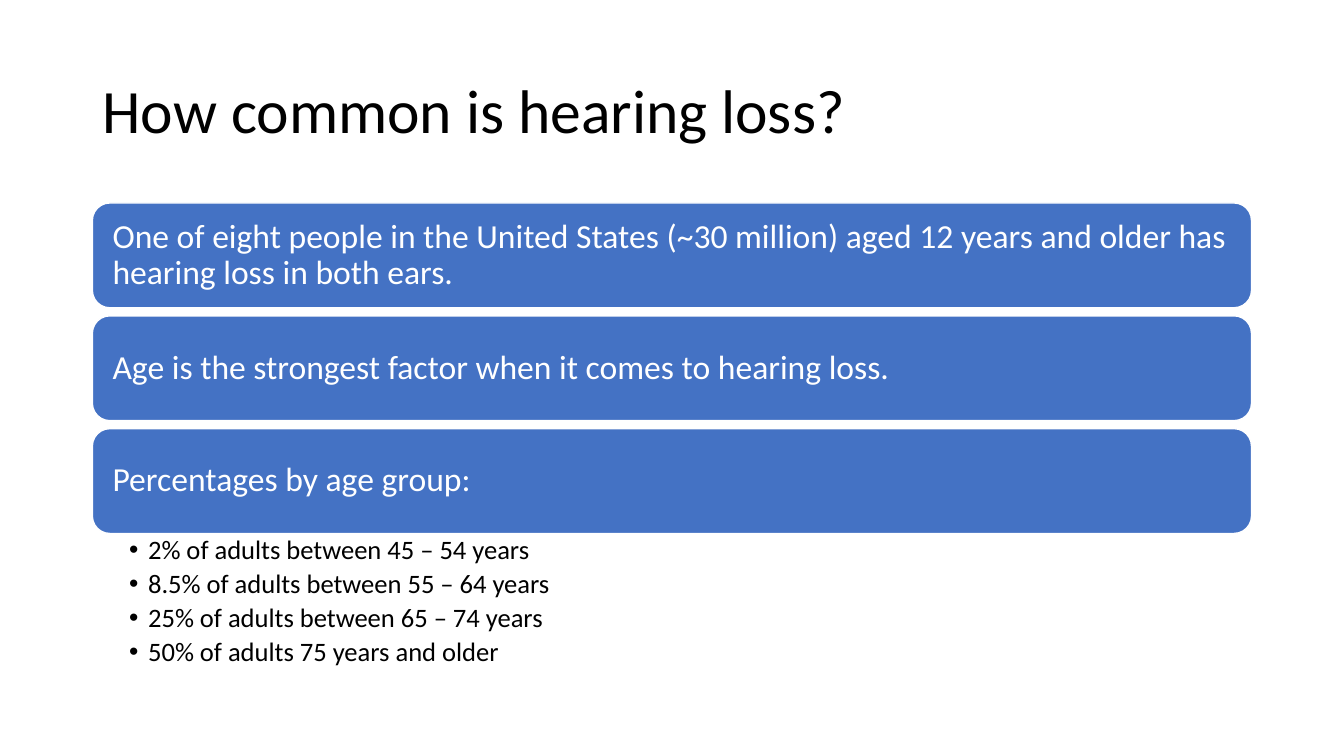
from lxml.etree import SubElement
from pptx import Presentation
from pptx.dml.color import RGBColor
from pptx.enum.shapes import MSO_SHAPE
from pptx.enum.text import MSO_ANCHOR, MSO_AUTO_SIZE, PP_ALIGN
from pptx.oxml.ns import qn
from pptx.util import Pt

BLUE = RGBColor(0x44, 0x72, 0xC4)
WHITE = RGBColor(0xFF, 0xFF, 0xFF)
BLACK = RGBColor(0x00, 0x00, 0x00)

LEFT, WIDTH = 66, 828
BAR_TOP, BAR_HEIGHT, BAR_STEP = 145, 74.9, 80.6

FACTS = [
    "One of eight people in the United States (~30 million) aged 12 years "
    "and older has hearing loss in both ears.",
    "Age is the strongest factor when it comes to hearing loss.",
    "Percentages by age group:",
]
AGE_GROUPS = [
    "2% of adults between 45 – 54 years",
    "8.5% of adults between 55 – 64 years",
    "25% of adults between 65 – 74 years",
    "50% of adults 75 years and older",
]


class SlideBuilder:
    """Holds the font and the current slide."""

    def __init__(self, s, font="Calibri"):
        self.s = s
        self.font = font

    def place(self, sp, top, height):
        sp.left, sp.top, sp.width, sp.height = (
            Pt(v) for v in (LEFT, top, WIDTH, height))

    def frame(self, sp, anchor, left, top, right, bottom):
        tf = sp.text_frame
        tf.word_wrap = True
        tf.auto_size = MSO_AUTO_SIZE.NONE
        tf.vertical_anchor = anchor
        tf.margin_left, tf.margin_top = Pt(left), Pt(top)
        tf.margin_right, tf.margin_bottom = Pt(right), Pt(bottom)
        return tf

    def add_text(self, p, text, size, color, after=0):
        p.alignment = PP_ALIGN.LEFT
        p.line_spacing = 0.9
        p.space_before, p.space_after = Pt(0), Pt(after)
        r = p.add_run()
        r.text = text
        r.font.name, r.font.size = self.font, Pt(size)
        r.font.color.rgb = color

    def title(self, text, top, height):
        sp = self.s.shapes.title
        self.place(sp, top, height)
        tf = self.frame(sp, MSO_ANCHOR.MIDDLE, 7.2, 3.6, 7.2, 3.6)
        self.add_text(tf.paragraphs[0], text, 44, BLACK)

    def bar(self, text, top):
        sp = self.s.shapes.add_shape(
            MSO_SHAPE.ROUNDED_RECTANGLE, Pt(LEFT), Pt(top), Pt(WIDTH), Pt(BAR_HEIGHT))
        sp.shadow.inherit = False
        sp.fill.solid()
        sp.fill.fore_color.rgb = BLUE
        sp.line.color.rgb = WHITE
        sp.line.width = Pt(1)
        tf = self.frame(sp, MSO_ANCHOR.MIDDLE, 10.8, 7.2, 10.8, 7.2)
        self.add_text(tf.paragraphs[0], text, 24, WHITE)

    def bullets(self, items, top, height):
        sp = self.s.placeholders[1]
        self.place(sp, top, height)
        tf = self.frame(sp, MSO_ANCHOR.TOP, 26.3, 2, 13.5, 2)
        for i, text in enumerate(items):
            p = tf.add_paragraph() if i else tf.paragraphs[0]
            pPr = p._p.get_or_add_pPr()
            pPr.set("marL", str(Pt(13.5)))
            pPr.set("indent", str(-Pt(13.5)))
            SubElement(pPr, qn("a:buFont"), typeface="Arial")
            SubElement(pPr, qn("a:buChar"), char="•")
            self.add_text(p, text, 19, BLACK, after=3.8)


def main():
    prs = Presentation()
    prs.slide_width, prs.slide_height = Pt(960), Pt(540)
    s = prs.slides.add_slide(prs.slide_layouts[1])
    builder = SlideBuilder(s)

    # Title
    builder.title("How common is hearing loss?", 28.8, 104.4)

    # Stacked fact bars
    for i, fact in enumerate(FACTS):
        builder.bar(fact, BAR_TOP + i * BAR_STEP)

    # Age group list
    builder.bullets(AGE_GROUPS, 381.4, 103.7)

    prs.save("out.pptx")


if __name__ == "__main__":
    main()
